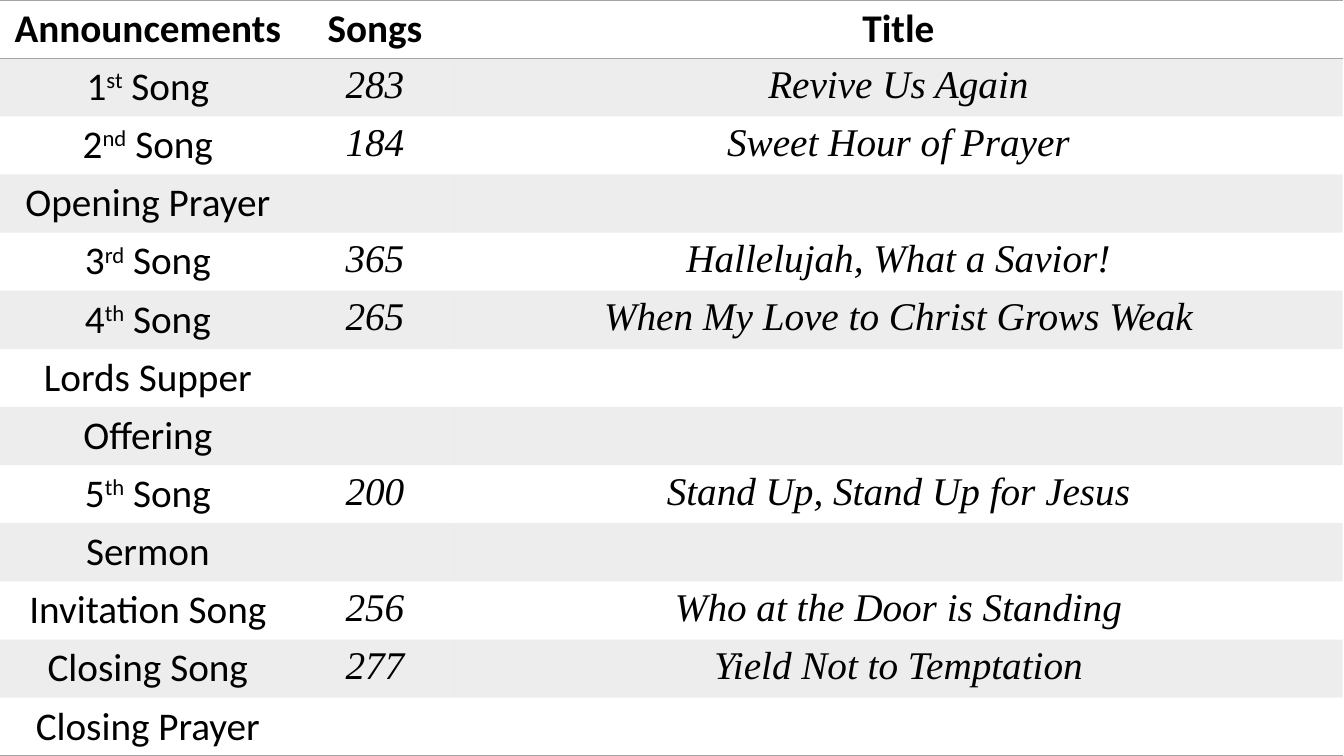
import pptx
import pptx.dml.color
import pptx.enum.text
import pptx.oxml
import pptx.oxml.ns
import pptx.util

BLACK = pptx.dml.color.RGBColor(0x00, 0x00, 0x00)
GRAY = pptx.dml.color.RGBColor(0xA5, 0xA5, 0xA5)
NO_STYLE = "{2D5ABB26-0587-4C30-8999-92F81FD0307C}"
COLUMN_SHARES = (0.22, 0.118, 0.661)

# Text between carets is superscript.
PROGRAM = (
    ("Announcements", "Songs", "Title"),
    ("1^st^ Song", "283", "Revive Us Again"),
    ("2^nd^ Song", "184", "Sweet Hour of Prayer"),
    ("Opening Prayer", "", ""),
    ("3^rd^ Song", "365", "Hallelujah, What a Savior!"),
    ("4^th^ Song", "265", "When My Love to Christ Grows Weak"),
    ("Lords Supper", "", ""),
    ("Offering", "", ""),
    ("5^th^ Song", "200", "Stand Up, Stand Up for Jesus"),
    ("Sermon", "", ""),
    ("Invitation Song", "256", "Who at the Door is Standing"),
    ("Closing Song", "277", "Yield Not to Temptation"),
    ("Closing Prayer", "", ""),
)


def write_cell(cell, text, header, song):
    p = cell.text_frame.paragraphs[0]
    p.alignment = pptx.enum.text.PP_ALIGN.CENTER
    p.font.size = pptx.util.Pt(28)
    p.font.name = "Times New Roman" if song else "Calibri"
    p.font.bold = header
    p.font.italic = song
    p.font.color.rgb = BLACK
    if not text:
        return
    for i, part in enumerate(text.split("^")):
        r = p.add_run()
        r.text = part
        if i % 2:
            r.font._element.set("baseline", "30000")


def add_border(cell, side):
    """Draw a thin gray line on one side, "T" or "B"; call before filling."""
    cell._tc.get_or_add_tcPr().append(pptx.oxml.parse_xml(
        f'<a:ln{side} {pptx.oxml.ns.nsdecls("a")} w="{pptx.util.Pt(1)}">'
        f'<a:solidFill><a:srgbClr val="{GRAY}"/></a:solidFill></a:ln{side}>'))


def fill_band(cell):
    cell.fill.solid()
    cell.fill.fore_color.rgb = GRAY
    color = cell._tc.tcPr.find(".//" + pptx.oxml.ns.qn("a:solidFill") + "/"
                               + pptx.oxml.ns.qn("a:srgbClr"))
    color.append(pptx.oxml.parse_xml(
        f'<a:alpha {pptx.oxml.ns.nsdecls("a")} val="20000"/>'))


def add_program(s, width, height):
    last = len(PROGRAM) - 1
    frame = s.shapes.add_table(len(PROGRAM), len(COLUMN_SHARES), 0, 0,
                               width, height)
    table = frame.table
    table.first_row = table.horz_banding = False
    table._tbl.tblPr.find(pptx.oxml.ns.qn("a:tableStyleId")).text = NO_STYLE
    for column, share in zip(table.columns, COLUMN_SHARES):
        column.width = int(width * share)
    for i, texts in enumerate(PROGRAM):
        table.rows[i].height = height // len(PROGRAM)
        for j, text in enumerate(texts):
            cell = table.cell(i, j)
            write_cell(cell, text, header=i == 0, song=i > 0 and j > 0)
            if i == 0:
                add_border(cell, "T")
            if i in (0, last):
                add_border(cell, "B")
            if i % 2:
                fill_band(cell)
            else:
                cell.fill.background()


def main():
    prs = pptx.Presentation()
    prs.slide_width = pptx.util.Inches(13.33)
    prs.slide_height = pptx.util.Inches(7.5)
    s = prs.slides.add_slide(prs.slide_layouts[6])
    add_program(s, prs.slide_width, prs.slide_height)
    prs.save("out.pptx")


if __name__ == "__main__":
    main()
